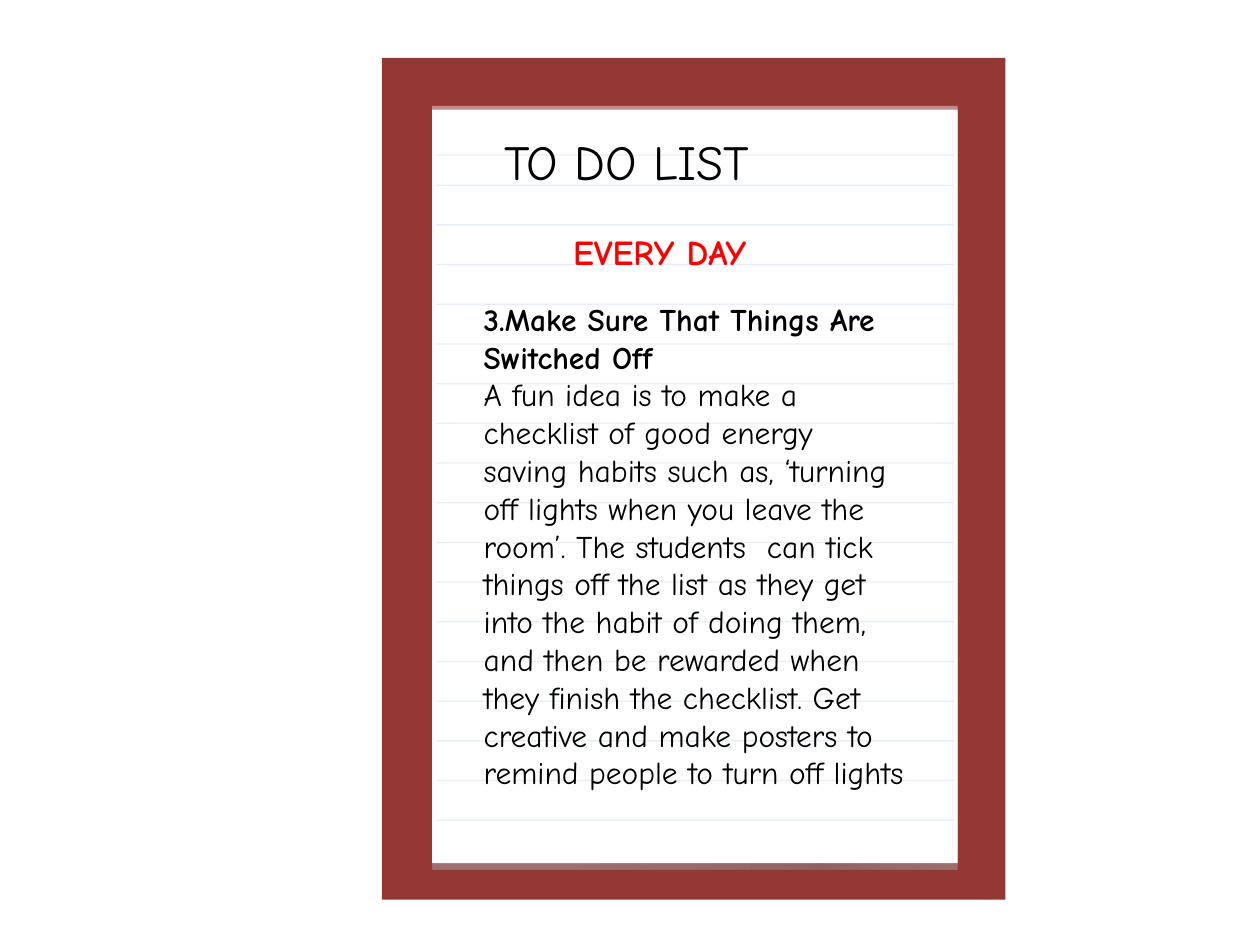
from lxml import etree
from pptx import Presentation
from pptx.dml.color import RGBColor
from pptx.enum.shapes import MSO_CONNECTOR, MSO_SHAPE
from pptx.enum.text import MSO_ANCHOR, MSO_AUTO_SIZE, PP_ALIGN
from pptx.oxml import parse_xml
from pptx.oxml.ns import nsdecls, qn
from pptx.util import Inches, Pt

# Content
HEADING = "TO DO LIST"
FREQUENCY = "EVERY DAY"
TASK = "3.Make Sure That Things Are Switched Off"
ADVICE = (
    "A fun idea is to make a checklist of good energy saving habits such as, "
    "‘turning off lights when you leave the room’. The students  can tick things "
    "off the list as they get into the habit of doing them, and then be rewarded "
    "when they finish the checklist. Get creative and make posters to remind "
    "people to turn off lights"
)

FONT = "Comic Neue"
BLACK = RGBColor(0x00, 0x00, 0x00)
RED = RGBColor(0xFF, 0x00, 0x00)
WHITE = RGBColor(0xFF, 0xFF, 0xFF)
FRAME_RED = RGBColor(0x95, 0x37, 0x35)
RULE_BLUE = RGBColor(0x4B, 0x7E, 0xBC)
SHADE_STOPS = [(27, "A6A6A6", 51), (74, "8C8C8C", 51), (100, "A6A6A6", 51)]

# Grid, in inches
PAPER_LEFT, PAPER_TOP, PAPER_W, PAPER_H = 3.43, 0.87, 4.17, 5.98
RULE_MARGIN = 0.03
RULE_STEP = 0.315
RULES = [1.23] + [1.47 + RULE_STEP * row for row in range(17)]

prs = Presentation()
prs.slide_width, prs.slide_height = Inches(10), Inches(7.5)
slide = prs.slides.add_slide(prs.slide_layouts[5])
shapes = slide.shapes


def set_alpha(fill_parent, percent):
    color = fill_parent.find(".//" + qn("a:srgbClr"))
    etree.SubElement(color, qn("a:alpha")).set("val", str(percent * 1000))


def add_panel(left, top, width, height, color=WHITE):
    panel = shapes.add_shape(MSO_SHAPE.RECTANGLE, *map(Inches, (left, top, width, height)))
    panel.shadow.inherit = False
    panel.fill.solid()
    panel.fill.fore_color.rgb = color
    panel.line.fill.background()
    return panel


def shade(panel, stops):
    marks = "".join(
        f'<a:gs pos="{pos * 1000}"><a:srgbClr val="{color}">'
        f'<a:alpha val="{alpha * 1000}"/></a:srgbClr></a:gs>'
        for pos, color, alpha in stops
    )
    gradient = parse_xml(
        f'<a:gradFill {nsdecls("a")}><a:gsLst>{marks}</a:gsLst><a:lin ang="0"/></a:gradFill>'
    )
    solid = panel._element.spPr.find(qn("a:solidFill"))
    solid.getparent().replace(solid, gradient)


def add_rule(y):
    left, right = PAPER_LEFT + RULE_MARGIN, PAPER_LEFT + PAPER_W - RULE_MARGIN
    rule = shapes.add_connector(
        MSO_CONNECTOR.STRAIGHT, Inches(left), Inches(y), Inches(right), Inches(y)
    )
    rule.line.color.rgb = RULE_BLUE
    rule.line.width = Pt(0.75)
    set_alpha(rule._element.spPr, 13)
    etree.SubElement(rule._element.spPr, qn("a:effectLst"))


def write(text, box, size, color=BLACK, bold=False, new=False):
    frame = box.text_frame
    paragraph = frame.add_paragraph() if new else frame.paragraphs[0]
    paragraph.text = text
    paragraph.alignment = PP_ALIGN.LEFT
    font = paragraph.runs[0].font
    font.name, font.size, font.bold = FONT, Pt(size), bold
    font.color.rgb = color


def place(box, left, top, width, height):
    box.left, box.top, box.width, box.height = map(Inches, (left, top, width, height))
    frame = box.text_frame
    frame.word_wrap = True
    frame.vertical_anchor = MSO_ANCHOR.TOP
    frame.auto_size = MSO_AUTO_SIZE.SHAPE_TO_FIT_TEXT
    return box


# Frame, paper edges and paper
add_panel(3.03, 0.46, 4.95, 6.68, FRAME_RED)
upper_edge = add_panel(PAPER_LEFT, PAPER_TOP - 0.03, PAPER_W, PAPER_H)
set_alpha(upper_edge._element.spPr, 42)
shade(add_panel(PAPER_LEFT, PAPER_TOP + 0.05, PAPER_W, PAPER_H), SHADE_STOPS)
add_panel(PAPER_LEFT, PAPER_TOP, PAPER_W, PAPER_H)

# Ruled lines
for y in RULES:
    add_rule(y)

# Heading, raised above the paper
heading = place(shapes.title, 3.9, 0.99, 3.23, 0.57)
shapes._spTree.append(heading._element)
write(HEADING, heading, 28)

# Notes
frequency = place(shapes.add_textbox(0, 0, 0, 0), 4.45, 1.78, 2.13, 0.44)
write(FREQUENCY, frequency, 20, RED, bold=True)
task = place(shapes.add_textbox(0, 0, 0, 0), 3.74, 2.33, 3.54, 4.34)
write(TASK, task, 18, bold=True)
write(ADVICE, task, 18, new=True)

prs.save("out.pptx")
